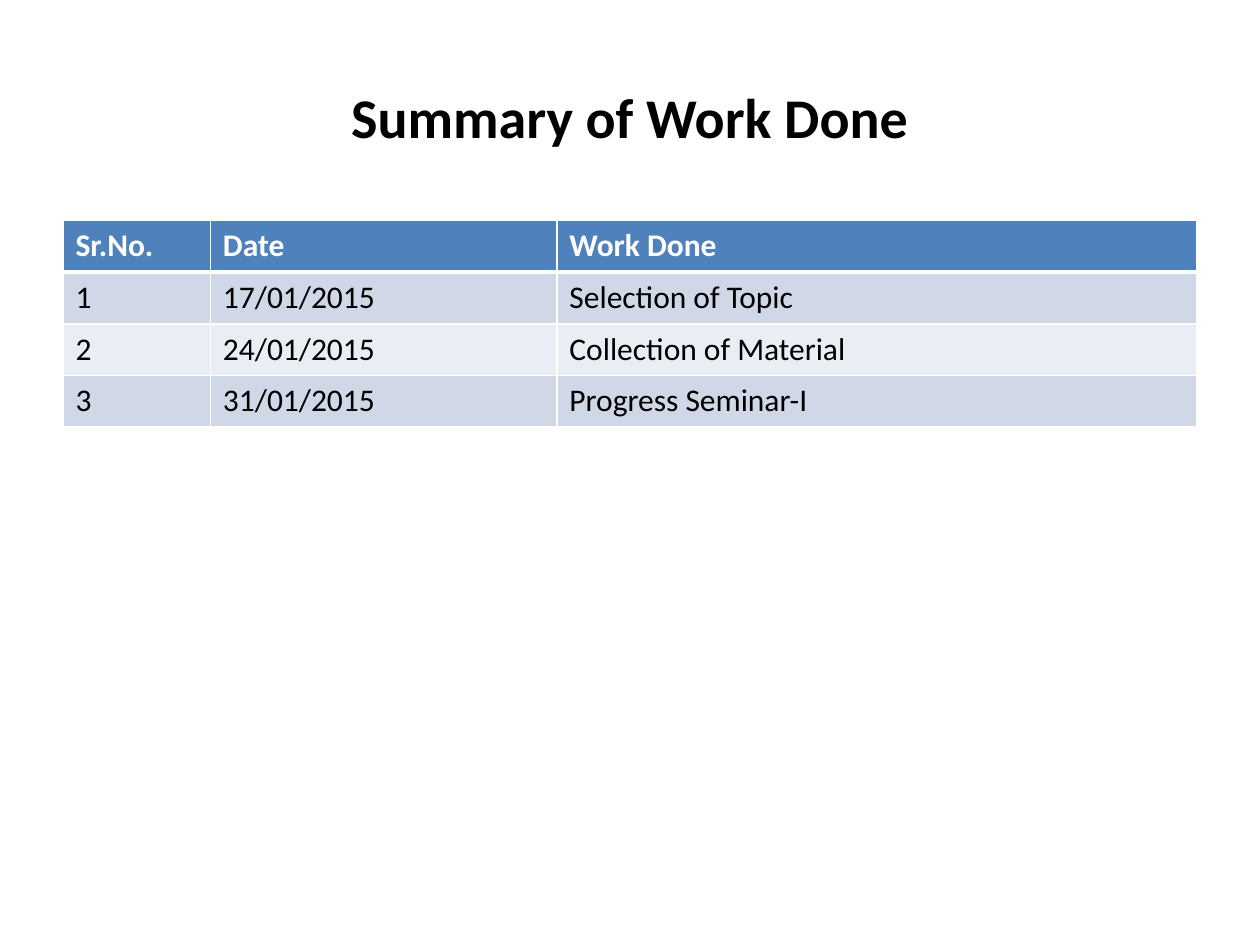
from dataclasses import dataclass

from lxml.etree import SubElement
from pptx import Presentation
from pptx.dml.color import RGBColor as RGB
from pptx.enum.text import MSO_ANCHOR as Anchor, PP_ALIGN as Align
from pptx.oxml.ns import qn
from pptx.util import Inches, Pt


@dataclass(frozen=True)
class Theme:
    font: str = "Calibri"
    title_size: int = 32
    table_size: int = 18
    ink: str = "000000"
    header_ink: str = "FFFFFF"
    header_fill: str = "4F81BD"
    bands: tuple = ("D0D8E8", "E9EDF4")
    border: str = "FFFFFF"
    thin: int = 1
    thick: int = 3


class SlideBuilder:
    def __init__(self, slide, theme):
        self.slide = slide
        self.theme = theme

    def add_run(self, paragraph, text, size, color, bold):
        run = paragraph.add_run()
        run.text = text
        run.font.name = self.theme.font
        run.font.size = Pt(size)
        run.font.bold = bold
        run.font.color.rgb = RGB.from_string(color)

    def title(self, text, left, top, width, height):
        heading = self.slide.shapes.add_textbox(left, top, width, height)
        frame = heading.text_frame
        frame.word_wrap = True
        frame.vertical_anchor = Anchor.MIDDLE
        frame.paragraphs[0].alignment = Align.CENTER
        self.add_run(frame.paragraphs[0], text, self.theme.title_size, self.theme.ink, True)

    def border(self, cell, side, width):
        properties = cell._tc.get_or_add_tcPr()
        line = SubElement(properties, qn(f"a:ln{side}"), w=str(Pt(width)))
        fill = SubElement(line, qn("a:solidFill"))
        SubElement(fill, qn("a:srgbClr"), val=self.theme.border)

    def table(self, rows, left, top, column_widths, row_height):
        theme = self.theme
        table = self.slide.shapes.add_table(
            len(rows), len(column_widths), left, top,
            sum(column_widths), row_height * len(rows)).table
        for column, width in zip(table.columns, column_widths):
            column.width = width
        for r, values in enumerate(rows):
            table.rows[r].height = row_height
            header = r == 0
            fill = theme.header_fill if header else theme.bands[(r - 1) % 2]
            ink = theme.header_ink if header else theme.ink
            for c, value in enumerate(values):
                cell = table.cell(r, c)
                # The line under the header is heavier than the rest
                for side in "LRTB":
                    heavy = (r, side) in ((0, "B"), (1, "T"))
                    self.border(cell, side, theme.thick if heavy else theme.thin)
                cell.fill.solid()
                cell.fill.fore_color.rgb = RGB.from_string(fill)
                self.add_run(cell.text_frame.paragraphs[0], value, theme.table_size, ink, header)


def main():
    presentation = Presentation()
    presentation.slide_width = Inches(10)
    presentation.slide_height = Inches(7.5)
    slide = presentation.slides.add_slide(presentation.slide_layouts[6])
    builder = SlideBuilder(slide, Theme())

    # Heading
    builder.title("Summary of Work Done", Inches(0.5), Inches(0.3), Inches(9), Inches(1.25))

    # Work log
    work_log = [
        ("Sr.No.", "Date", "Work Done"),
        ("1", "17/01/2015", "Selection of Topic"),
        ("2", "24/01/2015", "Collection of Material"),
        ("3", "31/01/2015", "Progress Seminar-I"),
    ]
    column_widths = [Inches(width) for width in (1.17, 2.75, 5.08)]
    builder.table(work_log, Inches(0.5), Inches(1.75), column_widths, Inches(0.41))

    presentation.save("out.pptx")


if __name__ == "__main__":
    main()
